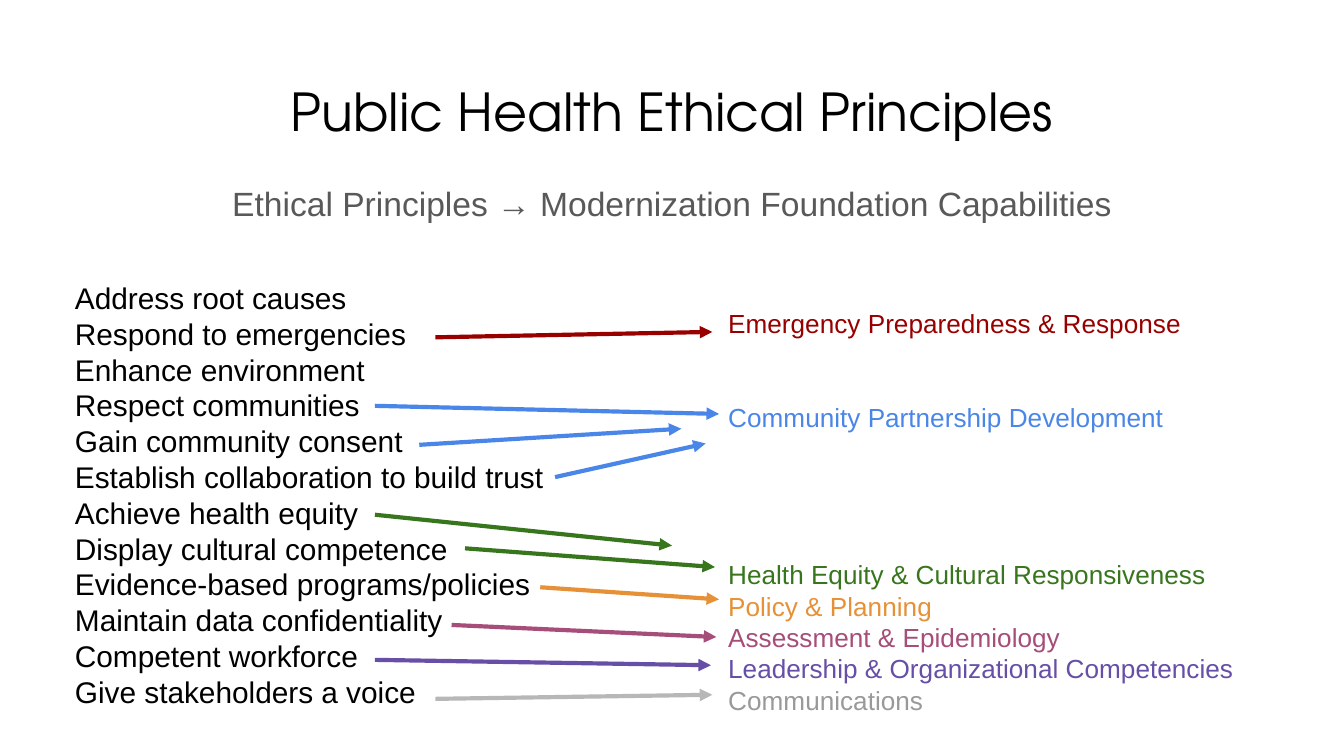
from lxml import etree
from pptx import Presentation
from pptx import util as u
from pptx.dml.color import RGBColor
from pptx.enum import shapes, text
from pptx.oxml.ns import qn

BLACK = RGBColor(0x00, 0x00, 0x00)
GRAY = RGBColor(0x59, 0x59, 0x59)
RED = RGBColor(0x98, 0x00, 0x00)
BLUE = RGBColor(0x4A, 0x86, 0xE8)
GREEN = RGBColor(0x38, 0x76, 0x1D)
ORANGE = RGBColor(0xE6, 0x91, 0x38)
PINK = RGBColor(0xA6, 0x4D, 0x79)
PURPLE = RGBColor(0x67, 0x4E, 0xA7)
SILVER = RGBColor(0x99, 0x99, 0x99)
LIGHT_SILVER = RGBColor(0xB7, 0xB7, 0xB7)

SLIDE_WIDTH = 10
SLIDE_HEIGHT = SLIDE_WIDTH * 9 / 16
LINE_HEIGHT = 1.2  # multiple of the text size

TITLE = "Public Health Ethical Principles"
SUBTITLE = "Ethical Principles → Modernization Foundation Capabilities"
PRINCIPLES = [
    "Address root causes",
    "Respond to emergencies",
    "Enhance environment",
    "Respect communities",
    "Gain community consent",
    "Establish collaboration to build trust",
    "Achieve health equity",
    "Display cultural competence",
    "Evidence-based programs/policies",
    "Maintain data confidentiality",
    "Competent workforce",
    "Give stakeholders a voice",
]
# text, colour, lines of space above
CAPABILITIES = [
    ("Emergency Preparedness & Response", RED, 0),
    ("Community Partnership Development", BLUE, 2),
    ("Health Equity & Cultural Responsiveness", GREEN, 4),
    ("Policy & Planning", ORANGE, 0),
    ("Assessment & Epidemiology", PINK, 0),
    ("Leadership & Organizational Competencies", PURPLE, 0),
    ("Communications", SILVER, 0),
]
# start x, start y, end x, end y, colour
ARROWS = [
    (3.24, 2.51, 5.30, 2.47, RED),
    (3.46, 4.08, 5.32, 4.22, GREEN),
    (2.79, 3.02, 5.35, 3.08, BLUE),
    (3.12, 3.31, 5.07, 3.19, BLUE),
    (4.13, 3.55, 5.25, 3.30, BLUE),
    (2.79, 3.83, 5.00, 4.06, GREEN),
    (4.02, 4.37, 5.35, 4.46, ORANGE),
    (3.36, 4.65, 5.33, 4.74, PINK),
    (2.79, 4.91, 5.29, 4.95, PURPLE),
    (3.24, 5.20, 5.30, 5.17, LIGHT_SILVER),
]


def add_text(slide, lines, left, top, width, height, size, font="Arial",
             align=text.PP_ALIGN.LEFT, line_height=LINE_HEIGHT):
    """Add a text box; each line is (text, colour, lines of space above)."""
    box = slide.shapes.add_textbox(*map(u.Inches, (left, top, width, height)))
    frame = box.text_frame
    frame.word_wrap = True
    frame.margin_left = frame.margin_right = u.Inches(0.1)
    frame.margin_top = frame.margin_bottom = u.Inches(0.1)
    for index, (words, color, gap) in enumerate(lines):
        para = frame.add_paragraph() if index else frame.paragraphs[0]
        para.alignment = align
        if line_height:
            para.line_spacing = u.Pt(size * line_height)
            para.space_before = u.Pt(size * line_height * gap)
        span = para.add_run()
        span.text = words
        span.font.name = font
        span.font.size = u.Pt(size)
        span.font.color.rgb = color


def add_arrow(slide, start_x, start_y, end_x, end_y, color):
    arrow = slide.shapes.add_connector(
        shapes.MSO_CONNECTOR.STRAIGHT,
        *map(u.Inches, (start_x, start_y, end_x, end_y)))
    arrow.line.color.rgb = color
    arrow.line.width = u.Pt(2.25)
    outline = arrow.line._get_or_add_ln()
    etree.SubElement(outline, qn("a:tailEnd"), type="triangle")
    etree.SubElement(outline.getparent(), qn("a:effectLst"))


def main():
    deck = Presentation()
    deck.slide_width = u.Inches(SLIDE_WIDTH)
    deck.slide_height = u.Inches(SLIDE_HEIGHT)
    slide = deck.slides.add_slide(deck.slide_layouts[6])

    center = text.PP_ALIGN.CENTER
    add_text(slide, [(TITLE, BLACK, 0)], 0.34, 0.49, 9.32, 0.63, size=28,
             font="TeX Gyre Adventor", align=center, line_height=None)
    add_text(slide, [(SUBTITLE, GRAY, 0)], 0.34, 1.26, 9.32, 0.78, size=18,
             align=center)
    add_text(slide, [(name, BLACK, 0) for name in PRINCIPLES],
             0.46, 1.98, 3.84, 3.45, size=16)
    add_text(slide, CAPABILITIES, 5.32, 2.19, 4.34, 3.24, size=14)
    for arrow in ARROWS:
        add_arrow(slide, *arrow)

    deck.save("out.pptx")


if __name__ == "__main__":
    main()
